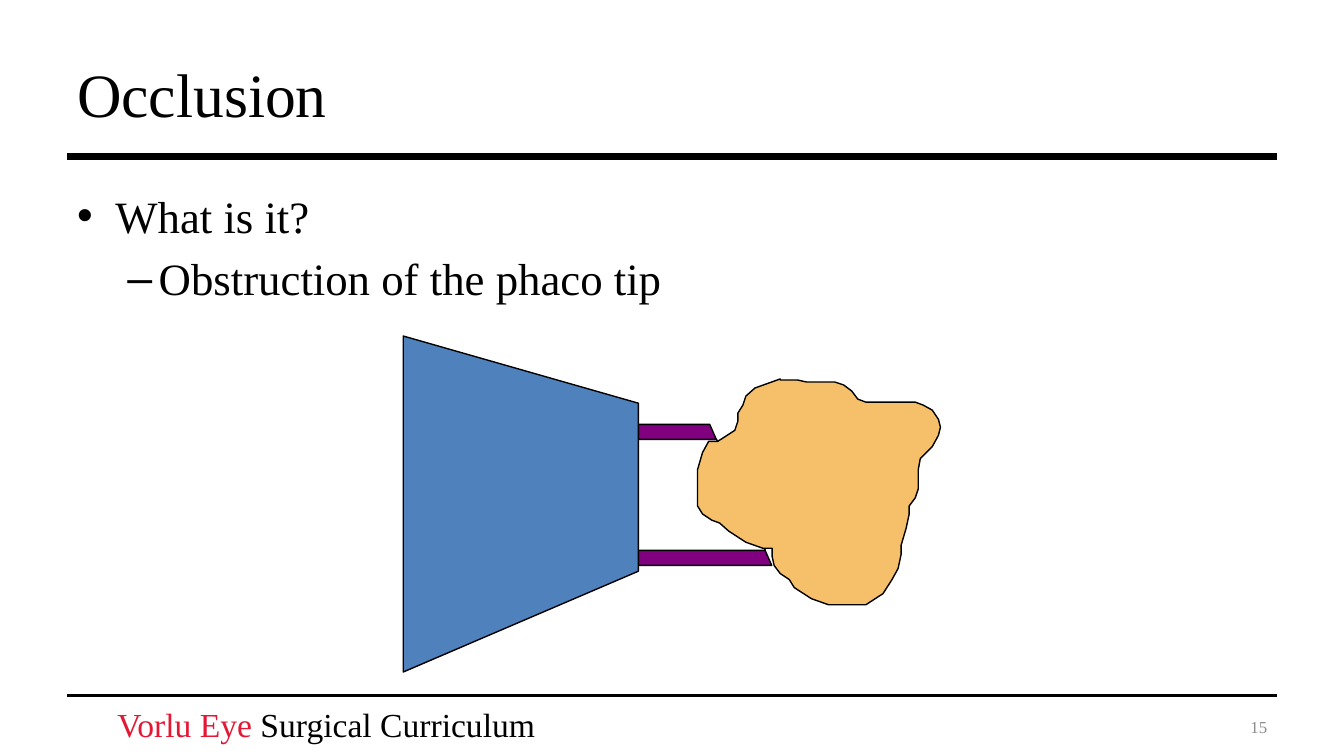
from pptx import Presentation
from pptx.dml.color import RGBColor
from pptx.enum.shapes import MSO_CONNECTOR, MSO_SHAPE
from pptx.enum.text import MSO_ANCHOR, PP_ALIGN
from pptx.oxml.ns import qn
from pptx.util import Inches, Pt
from lxml.etree import SubElement

COLS, ROWS = 40, 22.5
LEFT, SPAN = 2, 36
BLACK, WHITE = "000000", "FFFFFF"

CONE = [(12, 9.6), (18.54, 12.18), (18.54, 17.28), (12, 19.83)]

# Outline of the lens fragment, in hundredths of an inch
LENS = [
    (774, 376), (749, 385), (740, 393), (737, 402), (732, 410), (732, 418),
    (729, 427), (712, 438), (703, 438), (697, 449), (692, 466), (692, 502),
    (697, 510), (706, 516), (714, 519), (723, 527), (740, 538), (757, 544),
    (766, 544), (766, 552), (768, 561), (774, 569), (783, 575), (788, 583),
    (805, 594), (822, 600), (859, 600), (876, 589), (885, 575), (891, 564),
    (894, 550), (894, 541), (899, 524), (902, 510), (902, 502), (908, 494),
    (911, 485), (911, 466), (913, 455), (925, 443), (931, 432), (933, 424),
    (931, 416), (925, 407), (916, 402), (908, 399), (859, 399), (851, 396),
    (845, 388), (837, 382), (828, 379), (800, 379), (791, 377), (774, 377),
]


def grid(*cells):
    """Turn grid cells, a third of an inch each, into lengths."""
    return [Inches(cell / 3) for cell in cells]


def color(code):
    return RGBColor.from_string(code)


def rule(slide, row, width):
    left, right, y = grid(LEFT, LEFT + SPAN, row)
    line = slide.shapes.add_connector(MSO_CONNECTOR.STRAIGHT, left, y, right, y)
    line.line.color.rgb = color(BLACK)
    line.line.width = Pt(width)
    SubElement(line._element.spPr, qn("a:effectLst"))


def frame(slide, box, anchor=MSO_ANCHOR.TOP):
    text = slide.shapes.add_textbox(*grid(*box)).text_frame
    text.word_wrap = True
    text.vertical_anchor = anchor
    return text


def write(para, text, size=32, ink=BLACK, align=PP_ALIGN.LEFT):
    para.alignment = align
    run = para.add_run()
    run.text = text
    run.font.name = "Times New Roman"
    run.font.size = Pt(size)
    run.font.color.rgb = color(ink)


def bullet(para, mark, left, hang):
    props = para._p.get_or_add_pPr()
    props.set("marL", str(Inches(left)))
    props.set("indent", str(-Inches(hang)))
    SubElement(props, qn("a:buFont"), typeface="Arial")
    SubElement(props, qn("a:buChar"), char=mark)


def paint(shape, fill):
    shape.shadow.inherit = False
    shape.fill.solid()
    shape.fill.fore_color.rgb = color(fill)
    shape.line.color.rgb = color(BLACK)
    shape.line.width = Pt(1)


def slant(slide, box, fill):
    """Add a parallelogram that leans to the left."""
    shape = slide.shapes.add_shape(MSO_SHAPE.PARALLELOGRAM, *grid(*box))
    shape.adjustments[0] = 0.44
    shape._element.spPr.find(qn("a:xfrm")).set("flipH", "1")
    paint(shape, fill)


def outline(slide, points, unit, fill):
    """Add a closed freeform whose points are counted in units."""
    path = slide.shapes.build_freeform(*points[0], scale=unit)
    path.add_line_segments(points[1:], close=True)
    paint(path.convert_to_shape(), fill)


def main():
    deck = Presentation()
    deck.slide_width, deck.slide_height = grid(COLS, ROWS)
    slide = deck.slides.add_slide(deck.slide_layouts[6])

    rule(slide, 4.65, 5)
    rule(slide, 20.7, 2)

    foot = frame(slide, (3.2, 20.8, 13.2, 1.5)).paragraphs[0]
    write(foot, "Vorlu Eye", size=24, ink="E21835")
    write(foot, " Surgical Curriculum", size=24)

    title = frame(slide, (LEFT, 0.9, SPAN, 3.75), MSO_ANCHOR.MIDDLE)
    write(title.paragraphs[0], "Occlusion", size=44)

    body = frame(slide, (LEFT, 5.46, SPAN, 14.85))
    ask = body.paragraphs[0]
    bullet(ask, "•", 0.38, 0.38)
    write(ask, "What is it?")
    reply = body.add_paragraph()
    reply.level = 1
    bullet(reply, "–", 0.81, 0.31)
    reply.space_before = Pt(6.4)
    write(reply, "Obstruction of the phaco tip")

    page = frame(slide, (28.68, 21.03, 9.33, 1.2), MSO_ANCHOR.MIDDLE)
    write(page.paragraphs[0], "15", size=12, ink="8C8C8C", align=PP_ALIGN.RIGHT)

    slant(slide, (15.5, 12.63, 7.47, 4.2), "800080")
    slant(slide, (16.9, 13.08, 5.88, 3.3), WHITE)
    outline(slide, CONE, Inches(1) / 3, "4F81BD")
    outline(slide, LENS, Inches(1) / 100, "F6BF69")

    deck.save("out.pptx")


if __name__ == "__main__":
    main()
